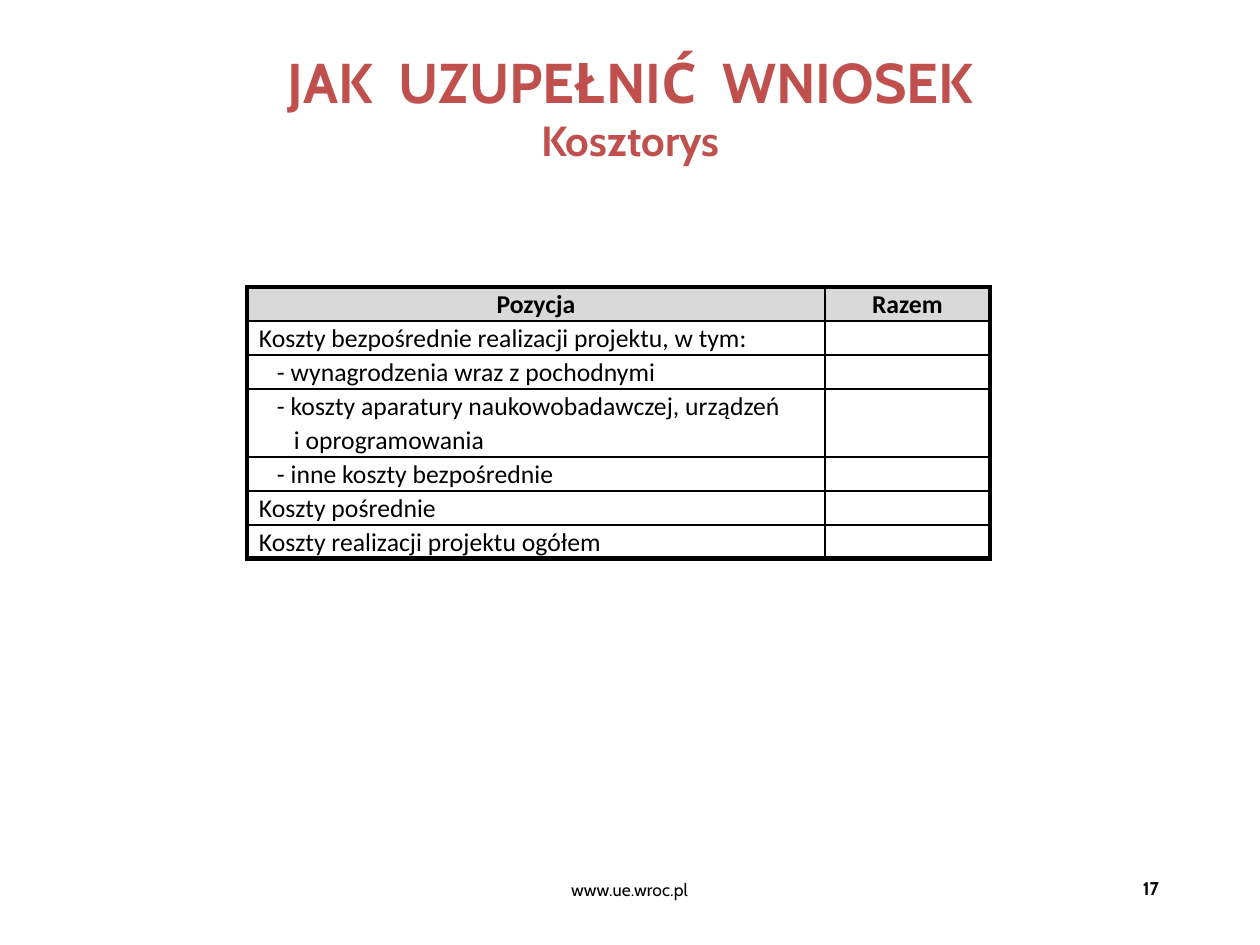
from lxml import etree
from pptx import Presentation
from pptx.dml.color import RGBColor
from pptx.enum.text import MSO_ANCHOR, PP_ALIGN
from pptx.oxml.ns import qn
from pptx.util import Emu, Pt

LEFT, CENTER, RIGHT = PP_ALIGN.LEFT, PP_ALIGN.CENTER, PP_ALIGN.RIGHT
TOP, MIDDLE = MSO_ANCHOR.TOP, MSO_ANCHOR.MIDDLE
EMU_PER_PX = 914400 // 168
BLACK, RED, GRAY = "000000", "C0504D", "D9D9D9"
THIN, THICK = 1, 2.25


def px(length):
    return Emu(length * EMU_PER_PX)


def color(hex_string):
    return RGBColor.from_string(hex_string)


def write(paragraph, text, size=11, font="Calibri", fill=BLACK, bold=False,
          align=LEFT, spacing=None, indent=0):
    """Add one run of text to a paragraph and format both."""
    paragraph.alignment = align
    if spacing:
        paragraph.line_spacing = spacing
    if indent:
        paragraph._p.get_or_add_pPr().set("marL", str(px(indent)))
    if not text:
        # An empty line takes its height from the end mark
        etree.SubElement(paragraph._p, qn("a:endParaRPr"), sz=str(size * 100))
        return
    run = paragraph.add_run()
    run.text = text
    run.font.size = Pt(size)
    run.font.name = font
    run.font.bold = bold
    run.font.color.rgb = color(fill)


class SlideBuilder:
    heading_font = "Cabin"
    cell_inset = 12
    cell_spacing = 1.07

    def __init__(self, width, height):
        self.presentation = Presentation()
        self.presentation.slide_width = px(width)
        self.presentation.slide_height = px(height)
        self.slide = self.presentation.slides.add_slide(
            self.presentation.slide_layouts[6])

    def text_box(self, left, top, width, height, lines, anchor=MIDDLE, **style):
        """Place lines of (text, size), parted by line breaks."""
        shape = self.slide.shapes.add_textbox(
            px(left), px(top), px(width), px(height))
        frame = shape.text_frame
        frame.word_wrap = True
        frame.vertical_anchor = anchor
        frame.margin_left = frame.margin_right = px(17)
        frame.margin_top = frame.margin_bottom = px(8)
        paragraph = frame.paragraphs[0]
        for index, (text, size) in enumerate(lines):
            if index:
                paragraph.add_line_break()
            write(paragraph, text, size=size, font=self.heading_font, **style)

    def borders(self, cell, **widths):
        properties = cell._tc.get_or_add_tcPr()
        for position, side in enumerate("LRTB"):
            line = etree.Element(qn(f"a:ln{side}"), w=str(Pt(widths[side])))
            fill = etree.SubElement(line, qn("a:solidFill"))
            etree.SubElement(fill, qn("a:srgbClr"), val=BLACK)
            properties.insert(position, line)

    def table(self, left, top, column_widths, line_height, rows):
        """Each row holds cells; each cell holds (text, indent) lines."""
        heights = [line_height * max(map(len, row)) for row in rows]
        table = self.slide.shapes.add_table(
            len(rows), len(column_widths), px(left), px(top),
            px(sum(column_widths)), px(sum(heights))).table
        for column, width in zip(table.columns, column_widths):
            column.width = px(width)
        last_row, last_column = len(rows) - 1, len(column_widths) - 1
        for r, row in enumerate(rows):
            table.rows[r].height = px(heights[r])
            for c, lines in enumerate(row):
                cell = table.cell(r, c)
                cell.margin_left = cell.margin_right = px(self.cell_inset)
                cell.margin_top = cell.margin_bottom = 0
                if r == 0:
                    cell.fill.solid()
                    cell.fill.fore_color.rgb = color(GRAY)
                else:
                    cell.fill.background()
                # Thick frame outside, thin grid inside
                self.borders(cell,
                             L=THICK if c == 0 else THIN,
                             R=THICK if c == last_column else THIN,
                             T=THICK if r == 0 else THIN,
                             B=THICK if r == last_row else THIN)
                frame = cell.text_frame
                for index, (text, indent) in enumerate(lines):
                    paragraph = (frame.add_paragraph() if index
                                 else frame.paragraphs[0])
                    write(paragraph, text, bold=r == 0, indent=indent,
                          align=CENTER if r == 0 else LEFT,
                          spacing=self.cell_spacing)


def main():
    builder = SlideBuilder(1260, 945)

    # Title
    builder.text_box(35, 39, 1191, 158,
                     [("JAK  UZUPEŁNIĆ  WNIOSEK", 24), ("Kosztorys", 18)],
                     anchor=TOP, align=CENTER, fill=RED, bold=True)

    # Cost estimate
    items = [
        [("Koszty bezpośrednie realizacji projektu, w tym:", 0)],
        [("- wynagrodzenia wraz z pochodnymi", 18)],
        [("- koszty aparatury naukowobadawczej, urządzeń", 18),
         ("i oprogramowania", 35)],
        [("- inne koszty bezpośrednie", 18)],
        [("Koszty pośrednie", 0)],
        [("Koszty realizacji projektu ogółem", 0)],
    ]
    header = [[("Pozycja", 0)], [("Razem", 0)]]
    rows = [header] + [[item, [("", 0)]] for item in items]
    builder.table(247, 287, [578, 165], 34, rows)

    # Footer and page number
    builder.text_box(496, 870, 267, 39, [("www.ue.wroc.pl", 7.5)], align=CENTER)
    builder.text_box(1026, 869, 150, 39, [("17", 7.9)], align=RIGHT, bold=True)

    builder.presentation.save("out.pptx")


if __name__ == "__main__":
    main()
